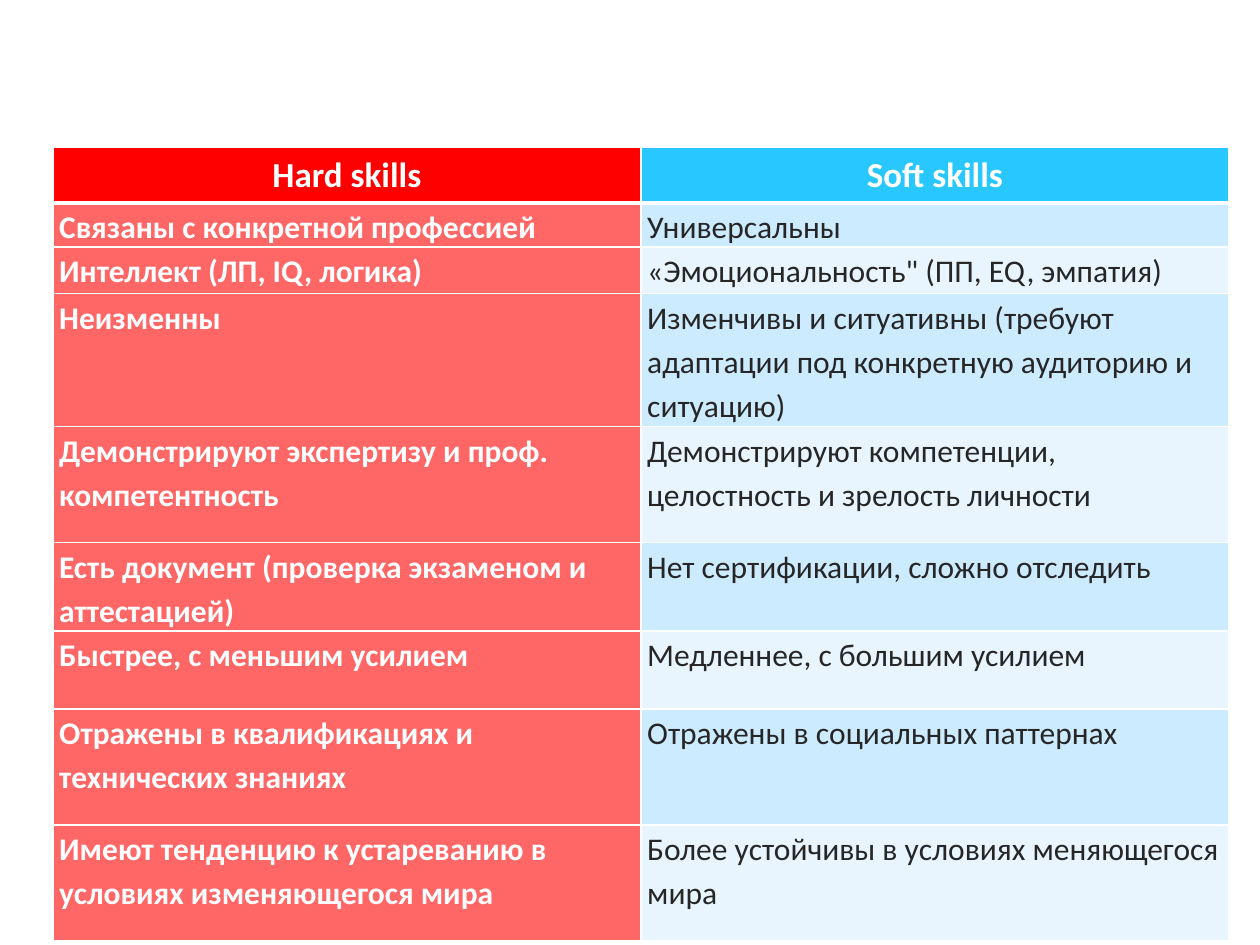
from typing import NamedTuple

from lxml.etree import SubElement
from pptx import Presentation
from pptx.dml.color import RGBColor
from pptx.enum.text import PP_ALIGN as Align
from pptx.oxml.ns import qn
from pptx.util import Pt

WHITE = RGBColor(0xFF, 0xFF, 0xFF)
INK = RGBColor(0x26, 0x26, 0x26)
RED = RGBColor(0xFF, 0x00, 0x00)
CORAL = RGBColor(0xFF, 0x66, 0x66)
SKY = RGBColor(0x29, 0xC7, 0xFF)
PALE_BLUES = (RGBColor(0xCD, 0xEB, 0xFF), RGBColor(0xE8, 0xF5, 0xFF))


class Comparison(NamedTuple):
    hard: str
    soft: str
    height: float
    align: Align = Align.LEFT


class Style(NamedTuple):
    fill: RGBColor
    color: RGBColor = WHITE
    bold: bool = True
    size: int = 18
    bottom_border: int = 1


HEADER = Comparison("Hard skills", "Soft skills", 31.7, Align.CENTER)
COMPARISONS = (
    Comparison("Связаны с конкретной профессией", "Универсальны", 22.3, Align.JUSTIFY),
    Comparison("Интеллект (ЛП, IQ, логика)", "«Эмоциональность\" (ПП, EQ, эмпатия)", 26.6),
    Comparison("Неизменны",
               "Изменчивы и ситуативны (требуют адаптации под конкретную аудиторию и ситуацию)", 76),
    Comparison("Демонстрируют экспертизу и проф. компетентность",
               "Демонстрируют компетенции, целостность и зрелость личности", 66.2),
    Comparison("Есть документ (проверка экзаменом и аттестацией)",
               "Нет сертификации, сложно отследить", 50),
    Comparison("Быстрее, с меньшим усилием", "Медленнее, с большим усилием", 44.6),
    Comparison("Отражены в квалификациях и технических знаниях",
               "Отражены в социальных паттернах", 66.2),
    Comparison("Имеют тенденцию к устареванию в условиях изменяющегося мира",
               "Более устойчивы в условиях меняющегося мира", 66.2),
)


def draw_borders(cell, top: int, bottom: int) -> None:
    properties = cell._tc.get_or_add_tcPr()
    widths = {"a:lnL": 1, "a:lnR": 1, "a:lnT": top, "a:lnB": bottom}
    for tag, width in widths.items():
        line = SubElement(properties, qn(tag), w=str(Pt(width)))
        SubElement(SubElement(line, qn("a:solidFill")), qn("a:srgbClr"), val=str(WHITE))


def fill_cell(cell, text: str, align: Align, style: Style, top_border: int) -> None:
    draw_borders(cell, top_border, style.bottom_border)
    cell.fill.solid()
    cell.fill.fore_color.rgb = style.fill
    cell.margin_left = cell.margin_right = Pt(3.6)
    cell.margin_top = cell.margin_bottom = Pt(0)
    paragraph = cell.text_frame.paragraphs[0]
    paragraph.alignment = align
    paragraph.line_spacing = 1.15
    run = paragraph.add_run()
    run.text = text
    run.font.name = "Calibri"
    run.font.size = Pt(style.size)
    run.font.bold = style.bold
    run.font.color.rgb = style.color


def fill_row(table, index: int, comparison: Comparison, styles: tuple[Style, Style],
             top_border: int) -> None:
    table.rows[index].height = Pt(comparison.height)
    for column, text in enumerate((comparison.hard, comparison.soft)):
        fill_cell(table.cell(index, column), text, comparison.align, styles[column], top_border)


def main() -> None:
    """Build the slide that compares hard and soft skills."""
    deck = Presentation()
    deck.slide_width, deck.slide_height = Pt(720), Pt(540)
    slide = deck.slides.add_slide(deck.slide_layouts[6])
    skills = slide.shapes.add_table(
        len(COMPARISONS) + 1, 2, Pt(30.24), Pt(84.24), Pt(672), Pt(446)).table
    header_styles = (Style(RED, size=20, bottom_border=3), Style(SKY, size=20, bottom_border=3))
    fill_row(skills, 0, HEADER, header_styles, 1)
    for index, comparison in enumerate(COMPARISONS, start=1):
        styles = (Style(CORAL), Style(PALE_BLUES[(index - 1) % 2], INK, False))
        fill_row(skills, index, comparison, styles, 3 if index == 1 else 1)
    deck.save("out.pptx")


if __name__ == "__main__":
    main()
